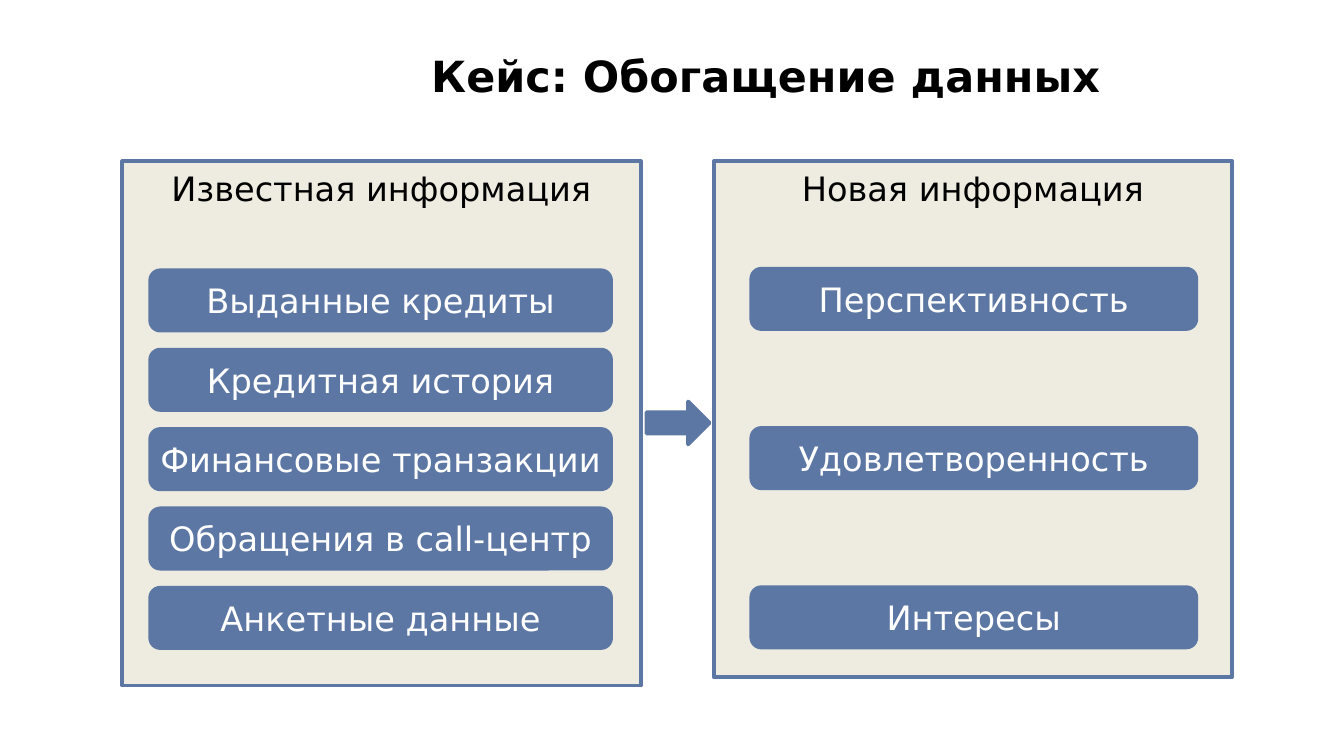
import pptx
import pptx.util
import pptx.dml.color
import pptx.enum.shapes
import pptx.enum.text

Cm, Pt = pptx.util.Cm, pptx.util.Pt
RGBColor = pptx.dml.color.RGBColor
Kind = pptx.enum.shapes.MSO_SHAPE
Align = pptx.enum.text.PP_ALIGN
Anchor = pptx.enum.text.MSO_ANCHOR

BLUE = RGBColor(0x5C, 0x77, 0xA4)
SAND = RGBColor(0xEE, 0xEC, 0xE1)
BLACK = RGBColor(0, 0, 0)
WHITE = RGBColor(255, 255, 255)


class Board:
    face = "DejaVu Sans"
    size = Pt(18)
    edge = Pt(2)
    inset = Cm(0.13)

    def __init__(self, slide):
        self.slide = slide

    def label(self, frame, text, align, anchor, color, **style):
        frame.vertical_anchor = anchor
        para = frame.paragraphs[0]
        para.alignment = align
        run = para.add_run()
        run.text = text
        for key, value in {"name": self.face, "size": self.size, **style}.items():
            setattr(run.font, key, value)
        run.font.color.rgb = color

    def shape(self, kind, box, fill):
        item = self.slide.shapes.add_shape(kind, *map(Cm, box))
        item.shadow.inherit = False
        item.fill.solid()
        item.fill.fore_color.rgb = fill
        item.line.color.rgb = BLUE
        item.line.width = self.edge
        frame = item.text_frame
        frame.word_wrap = False
        for side in ("left", "top", "right", "bottom"):
            setattr(frame, "margin_" + side, self.inset)
        return item

    def title(self, text, box):
        frame = self.slide.shapes.add_textbox(*map(Cm, box)).text_frame
        frame.word_wrap = True
        self.label(frame, text, Align.LEFT, Anchor.MIDDLE, BLACK,
                   size=Pt(23), bold=True)

    def panel(self, text, box):
        item = self.shape(Kind.RECTANGLE, box, SAND)
        self.label(item.text_frame, text, Align.CENTER, Anchor.TOP, BLACK)

    def pill(self, text, box):
        item = self.shape(Kind.ROUNDED_RECTANGLE, box, BLUE)
        self.label(item.text_frame, text, Align.CENTER, Anchor.MIDDLE, WHITE)

    def stack(self, names, left, top, width, step):
        for row, name in enumerate(names):
            self.pill(name, (left, top + row * step, width, 1.14))

    def arrow(self, box):
        self.shape(Kind.RIGHT_ARROW, box, BLUE)


def main():
    deck = pptx.Presentation()
    deck.slide_width, deck.slide_height = Cm(25.4), Cm(14.29)
    board = Board(deck.slides.add_slide(deck.slide_layouts[6]))

    # Title
    board.title("Кейс: Обогащение данных", (7.9, 0.74, 16.87, 1.35))

    # Known information
    board.panel("Известная информация", (2.31, 3.05, 9.8, 9.91))
    known = ["Выданные кредиты", "Кредитная история", "Финансовые транзакции",
             "Обращения в call-центр", "Анкетные данные"]
    board.stack(known, 2.84, 5.11, 8.71, 1.5)

    # New information
    board.panel("Новая информация", (13.49, 3.05, 9.8, 9.75))
    fresh = ["Перспективность", "Удовлетворенность", "Интересы"]
    board.stack(fresh, 14.2, 5.08, 8.41, 3.01)

    # Arrow from known to new
    board.arrow((12.22, 7.59, 1.19, 0.81))

    deck.save("out.pptx")


if __name__ == "__main__":
    main()
